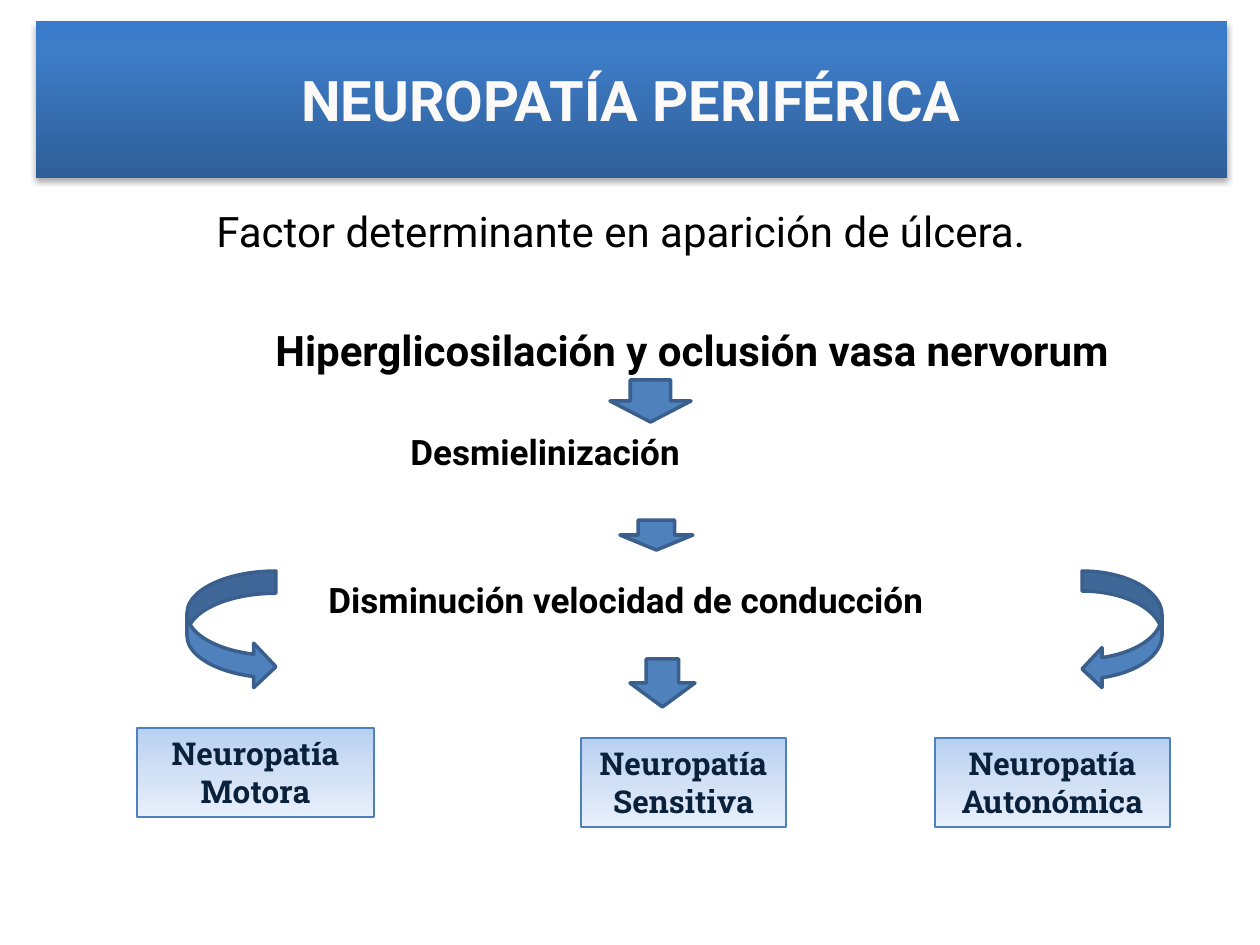
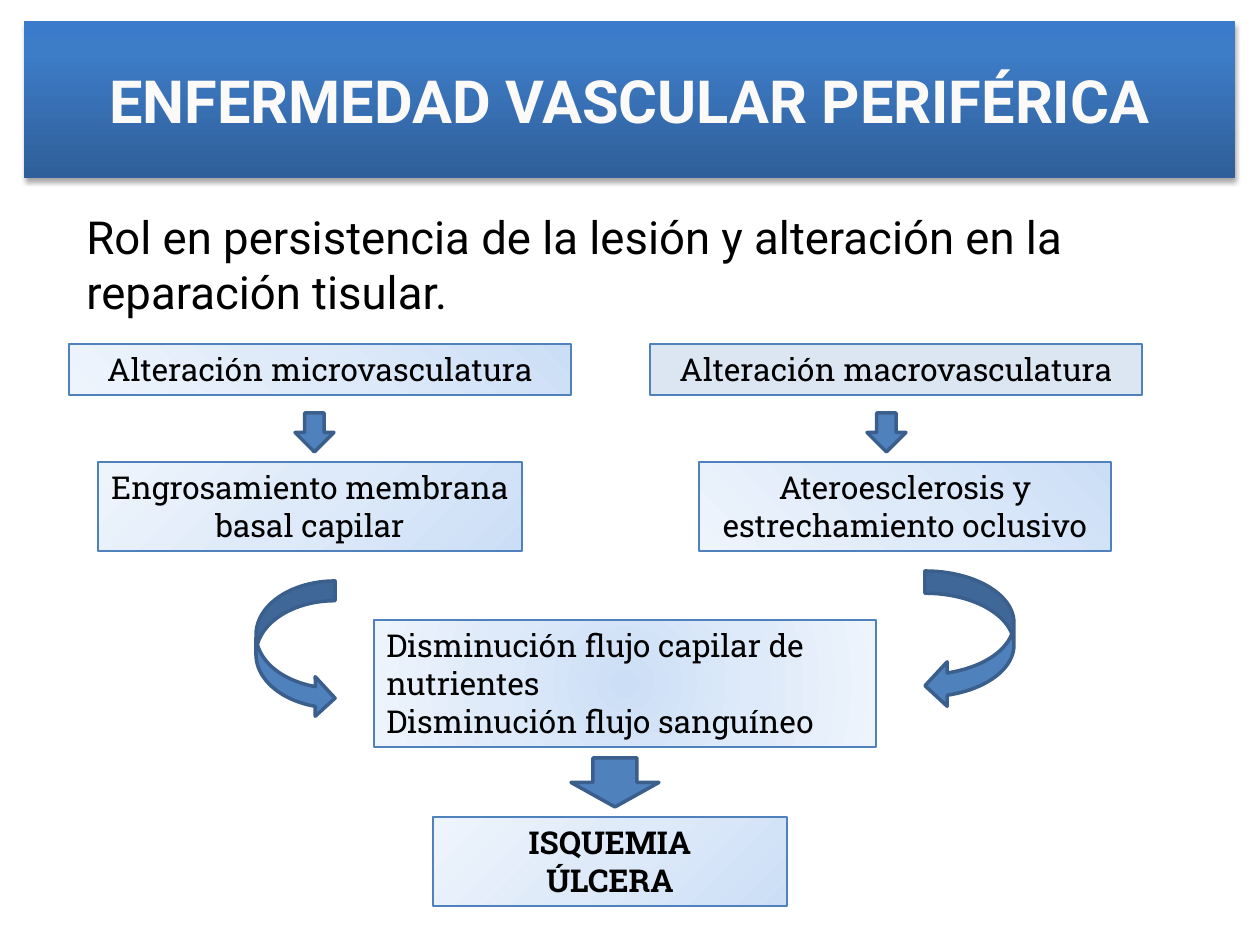
from pptx import Presentation
from pptx import util as u
from pptx.dml.color import RGBColor
from pptx.enum import shapes, text
from pptx.oxml import parse_xml
from pptx.oxml.ns import nsdecls

PX = u.Inches(1) / 126
HEADING_FONT, BOX_FONT = "Roboto", "Roboto Slab"
BLACK, NAVY, TITLE_COLOR = "000000", "09213B", "FBFAF8"
ARROW_FILL, ARROW_LINE, BOX_LINE = "4F81BD", "3A5F8C", "4F81BD"

# Gradients: stops as (percent, colour), then a direction in degrees
# or the focus (left, top, right, bottom) of a circle
BAND_STOPS = [(0, "2F5F99"), (80, "3D7CC7"), (100, "3A7CCB")]
TYPE_STOPS = [(0, "B7D0F1"), (50, "D2E0F5"), (100, "E8EFFA")]
CAUSE_STOPS = [(0, "CCDEF6"), (50, "DEEAF9"), (100, "EEF4FC")]
BAND = (BAND_STOPS, 270)
TYPE = (TYPE_STOPS, 90)
FROM_TOP_RIGHT = (CAUSE_STOPS, 135)
FROM_BOTTOM_RIGHT = (CAUSE_STOPS, 225)
FROM_CORNER = (CAUSE_STOPS, (100, 100, 0, 0))
FROM_CENTER = (CAUSE_STOPS, (50, 50, 50, 50))

ARROW_KINDS = {
    "down": shapes.MSO_SHAPE.DOWN_ARROW,
    "left": shapes.MSO_SHAPE.CURVED_LEFT_ARROW,
    "right": shapes.MSO_SHAPE.CURVED_RIGHT_ARROW,
}

# Places are (left, top, width, height) in px.
# body lines: text, indent px, space before px, format
# boxes: lines, place, fill, format
SLIDES = [
    {
        "title": ("NEUROPATÍA PERIFÉRICA", (36, 21, 1191, 157), 32),
        "body_place": (199, 195, 1061, 709),
        "body": [
            ("Factor determinante en aparición de úlcera.", 5, 0, dict(size=24)),
            ("Hiperglicosilación y oclusión vasa nervorum", 64, 69,
             dict(size=24, bold=True)),
            ("Desmielinización", 199, 56, dict(size=20, bold=True)),
            ("Disminución velocidad de conducción", 117, 106,
             dict(size=20, bold=True)),
        ],
        "boxes": [
            (["Neuropatía", "Motora"], (137, 728, 237, 89), TYPE,
             dict(color=NAVY, bold=True)),
            (["Neuropatía", "Sensitiva"], (581, 738, 205, 89), TYPE,
             dict(color=NAVY, bold=True)),
            (["Neuropatía", "Autonómica"], (935, 738, 235, 89), TYPE,
             dict(color=NAVY, bold=True)),
        ],
        "arrows": [
            ("down", (610, 380, 81, 42)),
            ("down", (620, 520, 73, 30)),
            ("down", (630, 659, 65, 48)),
            ("left", (1082, 571, 80, 118)),
            ("right", (187, 571, 89, 118)),
        ],
    },
    {
        "title": ("ENFERMEDAD VASCULAR PERIFÉRICA", (24, 21, 1211, 157), 34),
        "body_place": (69, 199, 1191, 746),
        "body": [
            ("Rol en persistencia de la lesión y alteración en la "
             "reparación tisular.", 5, 0, dict(size=26)),
        ],
        "boxes": [
            (["Alteración microvasculatura"], (69, 344, 502, 51),
             FROM_TOP_RIGHT, {}),
            (["Alteración macrovasculatura"], (650, 344, 492, 51),
             "DCE6F2", {}),
            (["Engrosamiento membrana basal capilar"], (98, 462, 424, 89),
             FROM_CORNER, {}),
            (["Ateroesclerosis y estrechamiento oclusivo"],
             (699, 462, 412, 89), FROM_TOP_RIGHT, {}),
            (["Disminución flujo capilar de nutrientes",
              "Disminución flujo sanguíneo"], (374, 620, 502, 127),
             FROM_CENTER, dict(align="LEFT")),
            (["ISQUEMIA", "ÚLCERA"], (433, 817, 354, 89),
             FROM_BOTTOM_RIGHT, dict(bold=True)),
        ],
        "arrows": [
            ("down", (295, 413, 39, 39)),
            ("down", (867, 413, 39, 39)),
            ("right", (256, 581, 79, 137)),
            ("left", (925, 571, 89, 137)),
            ("down", (571, 758, 88, 49)),
        ],
    },
]


def px(value):
    return u.Emu(round(value * PX))


def rgb(value):
    return RGBColor.from_string(value)


def add_text(paragraph, content, size=18, font=BOX_FONT, color=BLACK,
             bold=False, align="CENTER"):
    paragraph.alignment = getattr(text.PP_ALIGN, align)
    run = paragraph.add_run()
    run.text = content
    run.font.size = u.Pt(size)
    run.font.name = font
    run.font.bold = bold
    run.font.color.rgb = rgb(color)


def next_paragraph(frame, index):
    return frame.add_paragraph() if index else frame.paragraphs[0]


def fill_gradient(shape, stops, direction):
    stop_xml = "".join(
        f'<a:gs pos="{percent * 1000}"><a:srgbClr val="{color}"/></a:gs>'
        for percent, color in stops)
    if isinstance(direction, tuple):
        edges = " ".join(f'{side}="{percent * 1000}"'
                         for side, percent in zip("ltrb", direction))
        shade = f'<a:path path="circle"><a:fillToRect {edges}/></a:path>'
    else:
        shade = f'<a:lin ang="{direction * 60000}" scaled="0"/>'
    gradient = parse_xml(
        f'<a:gradFill {nsdecls("a")} rotWithShape="1">'
        f'<a:gsLst>{stop_xml}</a:gsLst>{shade}</a:gradFill>')
    shape.fill.background()
    properties = shape.element.spPr
    properties.replace(properties.find("{*}noFill"), gradient)


def add_figure(slide, kind, place, fill, line=None, line_width=0.75):
    shape = slide.shapes.add_shape(kind, *map(px, place))
    shape.shadow.inherit = False
    if line:
        shape.line.color.rgb = rgb(line)
        shape.line.width = u.Pt(line_width)
    else:
        shape.line.fill.background()
    if isinstance(fill, tuple):
        fill_gradient(shape, *fill)
    else:
        shape.fill.solid()
        shape.fill.fore_color.rgb = rgb(fill)
    return shape


def add_title(slide, content, place, size):
    band = add_figure(slide, shapes.MSO_SHAPE.RECTANGLE, place, BAND)
    band.element.spPr.find("{*}effectLst").append(parse_xml(
        f'<a:outerShdw {nsdecls("a")} blurRad="{u.Pt(3.1)}" '
        f'dist="{u.Pt(1.8)}" dir="5400000" rotWithShape="0">'
        '<a:srgbClr val="000000"><a:alpha val="35000"/></a:srgbClr>'
        '</a:outerShdw>'))
    frame = band.text_frame
    frame.vertical_anchor = text.MSO_ANCHOR.MIDDLE
    add_text(frame.paragraphs[0], content, size=size, font=HEADING_FONT,
             color=TITLE_COLOR, bold=True)


def add_body(slide, place, lines):
    frame = slide.shapes.add_textbox(*map(px, place)).text_frame
    frame.word_wrap = True
    frame.margin_top = px(10)
    for index, (content, indent, gap, style) in enumerate(lines):
        paragraph = next_paragraph(frame, index)
        add_text(paragraph, content, font=HEADING_FONT, align="LEFT", **style)
        paragraph.space_before = px(gap)
        paragraph._p.get_or_add_pPr().set("marL", str(px(indent)))


def add_box(slide, lines, place, fill, style):
    box = add_figure(slide, shapes.MSO_SHAPE.RECTANGLE, place, fill, BOX_LINE)
    frame = box.text_frame
    frame.word_wrap = True
    frame.auto_size = text.MSO_AUTO_SIZE.SHAPE_TO_FIT_TEXT
    frame.vertical_anchor = text.MSO_ANCHOR.TOP
    for index, content in enumerate(lines):
        add_text(next_paragraph(frame, index), content, **style)


def main():
    presentation = Presentation()
    presentation.slide_width = u.Inches(10)
    presentation.slide_height = u.Inches(7.5)
    for content in SLIDES:
        slide = presentation.slides.add_slide(presentation.slide_layouts[6])
        add_title(slide, *content["title"])
        add_body(slide, content["body_place"], content["body"])
        for box in content["boxes"]:
            add_box(slide, *box)
        for kind, place in content["arrows"]:
            add_figure(slide, ARROW_KINDS[kind], place, ARROW_FILL,
                       ARROW_LINE, 2)
    presentation.save("out.pptx")


if __name__ == "__main__":
    main()
